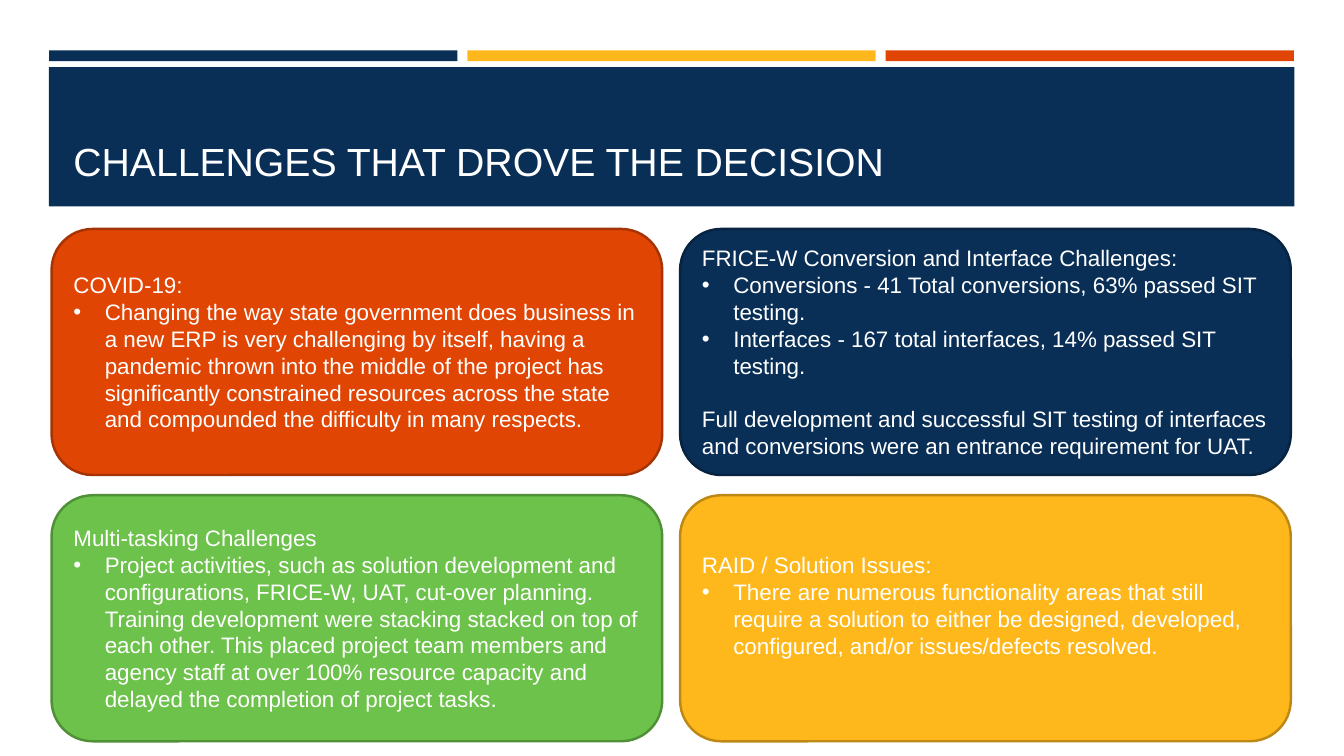
from lxml import etree
from pptx import Presentation
from pptx.dml.color import RGBColor
from pptx.enum.shapes import MSO_SHAPE
from pptx.enum.text import MSO_ANCHOR, PP_ALIGN
from pptx.oxml.ns import qn
from pptx.util import Cm, Pt

RECT, ROUND = MSO_SHAPE.RECTANGLE, MSO_SHAPE.ROUNDED_RECTANGLE
MIDDLE, BOTTOM, LEFT = MSO_ANCHOR.MIDDLE, MSO_ANCHOR.BOTTOM, PP_ALIGN.LEFT
FONT = "Arial"
NAVY, GOLD, RUST, GREEN, WHITE = "092F57", "FFB81C", "E14504", "6CC24A", "FFFFFF"

# Row by row: fill, outline, extra bottom inset, paragraphs (text, format)
CARDS = [
    (RUST, "A63303", 0, [
        ("COVID-19:", {}),
        ("Changing the way state government does business in a new ERP is very "
         "challenging by itself, having a pandemic thrown into the middle of the "
         "project has significantly constrained resources across the state and "
         "compounded the difficulty in many respects.", {"bullet": True}),
    ]),
    (NAVY, "072340", 0, [
        ("FRICE-W Conversion and Interface Challenges:", {}),
        ("Conversions - 41 Total conversions, 63% passed SIT testing.", {"bullet": True}),
        ("Interfaces - 167 total interfaces, 14% passed SIT testing.", {"bullet": True}),
        ("Full development and successful SIT testing of interfaces and conversions "
         "were an entrance requirement for UAT.", {"before": 19}),
    ]),
    (GREEN, "509037", 0, [
        ("Multi-tasking Challenges", {}),
        ("Project activities, such as solution development and configurations, "
         "FRICE-W, UAT, cut-over planning. Training development were stacking "
         "stacked on top of each other. This placed project team members and "
         "agency staff at over 100% resource capacity and delayed the completion "
         "of project tasks.", {"bullet": True}),
    ]),
    (GOLD, "BD8815", 0.67, [
        ("RAID / Solution Issues:", {}),
        ("There are numerous functionality areas that still require a solution to "
         "either be designed, developed, configured, and/or issues/defects "
         "resolved.", {"bullet": True}),
    ]),
]


def color(code):
    return RGBColor.from_string(code)


def add_block(slide, kind, left, top, width, height, fill, line=None):
    block = slide.shapes.add_shape(kind, Cm(left), Cm(top), Cm(width), Cm(height))
    block.shadow.inherit = False
    block.fill.solid()
    block.fill.fore_color.rgb = color(fill)
    if line:
        block.line.color.rgb = color(line)
        block.line.width = Pt(1.75)
    else:
        block.line.fill.background()
    return block


def add_text(frame, text, size=16, tint=WHITE, bullet=False, before=0):
    """Fill the first paragraph if it is free, else append one."""
    para = frame.paragraphs[0] if not frame.text else frame.add_paragraph()
    para.alignment = LEFT
    para.space_before = Pt(before)
    run = para.add_run()
    run.text = text
    run.font.name = FONT
    run.font.size = Pt(size)
    run.font.color.rgb = color(tint)
    if bullet:
        props = para._p.get_or_add_pPr()
        props.set("marL", str(Cm(0.79)))
        props.set("indent", str(-Cm(0.79)))
        etree.SubElement(props, qn("a:buFont"), typeface=FONT)
        etree.SubElement(props, qn("a:buChar"), char="•")


def add_card(slide, left, top, fill, line, inset, paras):
    card = add_block(slide, ROUND, left, top, 15.39, 6.2, fill, line)
    frame = card.text_frame
    frame.word_wrap = True
    frame.vertical_anchor = MIDDLE
    frame.margin_bottom = Cm(0.13 + inset)
    for text, style in paras:
        add_text(frame, text, **style)


def add_title(slide, text):
    add_block(slide, RECT, 1.23, 1.69, 31.39, 3.51, NAVY)
    box = slide.shapes.add_textbox(Cm(1.6), Cm(2.03), Cm(30.63), Cm(2.74))
    box.text_frame.word_wrap = True
    box.text_frame.vertical_anchor = BOTTOM
    add_text(box.text_frame, text, size=28)


def main():
    deck = Presentation()
    deck.slide_width, deck.slide_height = Cm(33.87), Cm(19.05)
    slide = deck.slides.add_slide(deck.slide_layouts[6])

    # Colour bars above the title
    for i, fill in enumerate((NAVY, GOLD, RUST)):
        add_block(slide, RECT, 1.24 + i * 10.54, 1.27, 10.29, 0.27, fill)

    # Title band
    add_title(slide, "CHALLENGES THAT DROVE THE DECISION")

    # Two by two grid of challenges
    for i, card in enumerate(CARDS):
        row, col = divmod(i, 2)
        add_card(slide, 1.3 + col * 15.84, 5.77 + row * 6.71, *card)

    deck.save("out.pptx")


if __name__ == "__main__":
    main()
